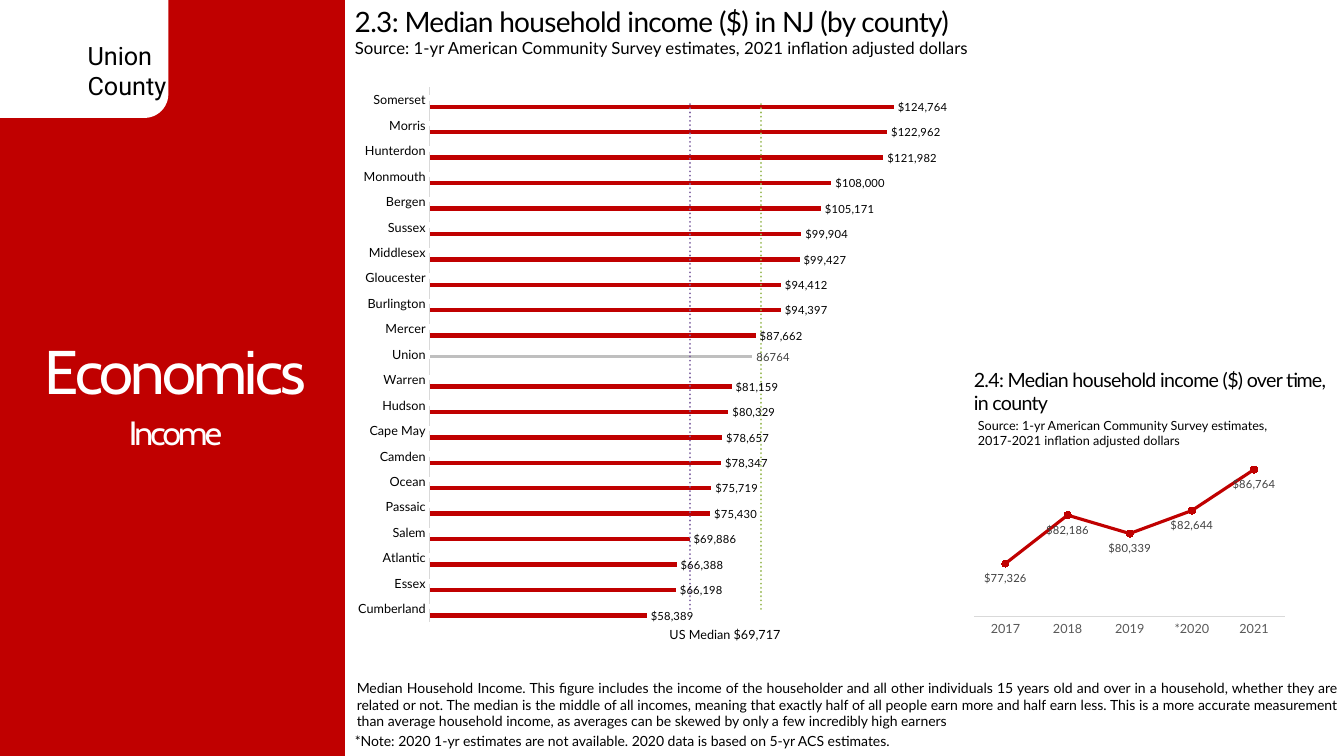
from lxml import etree
from pptx import Presentation
from pptx.chart.data import CategoryChartData
from pptx.dml.color import RGBColor
from pptx.enum.chart import XL_CHART_TYPE as Kind, XL_LABEL_POSITION as Spot
from pptx.enum.chart import XL_MARKER_STYLE as Marker, XL_TICK_MARK as Tick
from pptx.enum.shapes import MSO_SHAPE as Preset
from pptx.enum.text import MSO_ANCHOR as Anchor, MSO_AUTO_SIZE as Fit, PP_ALIGN as Align
from pptx.oxml import parse_xml
from pptx.oxml.ns import nsdecls, qn
from pptx.util import Inches, Pt

RED = RGBColor(0xC0, 0x00, 0x00)
WHITE = RGBColor(0xFF, 0xFF, 0xFF)
BLACK = RGBColor(0x00, 0x00, 0x00)
SILVER = RGBColor(0xBF, 0xBF, 0xBF)
RULE = RGBColor(0xD9, 0xD9, 0xD9)
CHARCOAL = RGBColor(0x40, 0x40, 0x40)
GRAY = RGBColor(0x59, 0x59, 0x59)
GREEN = RGBColor(0x9B, 0xBB, 0x59)
PURPLE = RGBColor(0x80, 0x64, 0xA2)

DOLLARS = '"$"#,##0'
HOME = "Union"
STATE_LINE, US_LINE = 89000, 70000
INCOMES = {
    "Cumberland": 58389, "Essex": 66198, "Atlantic": 66388, "Salem": 69886,
    "Passaic": 75430, "Ocean": 75719, "Camden": 78347, "Cape May": 78657,
    "Hudson": 80329, "Warren": 81159, "Union": 86764, "Mercer": 87662,
    "Burlington": 94397, "Gloucester": 94412, "Middlesex": 99427,
    "Sussex": 99904, "Bergen": 105171, "Monmouth": 108000,
    "Hunterdon": 121982, "Morris": 122962, "Somerset": 124764,
}
HISTORY = {"2017": 77326, "2018": 82186, "2019": 80339, "*2020": 82644, "2021": 86764}

SECTION = {"lines": ["Economics"], "at": (0.03, 3.22, 3.42, 1), "size": 44, "font": "Cabin",
           "color": WHITE, "spacing": -2, "align": Align.CENTER,
           "anchor": Anchor.MIDDLE, "leading": 0.9}
TOPIC = {**SECTION, "lines": ["Income"], "at": (0.03, 3.81, 3.42, 1), "size": 24}
TEXTS = [
    {"lines": ["Union", "County"], "at": (0.77, 0.35, 1, 0.71), "size": 18, "font": "Roboto"},
    {"lines": ["2.3: Median household income ($) in NJ (by county)"],
     "at": (3.42, 0, 9.86, 0.44), "size": 20, "spacing": -0.5},
    {"lines": ["Source: 1-yr American Community Survey estimates, 2021 inflation adjusted dollars"],
     "at": (3.42, 0.33, 9.19, 0.3), "size": 12},
    {"lines": ["Median Household Income. This figure includes the income of the householder and all "
               "other individuals 15 years old and over in a household, whether they are related or "
               "not. The median is the middle of all incomes, meaning that exactly half of all people "
               "earn more and half earn less. This is a more accurate measurement than average "
               "household income, as averages can be skewed by only a few incredibly high earners"],
     "at": (3.44, 6.69, 9.92, 0.6), "size": 10, "align": Align.JUSTIFY},
    {"lines": ["2.4: Median household income ($) over time, in county"],
     "at": (9.56, 3.6, 3.71, 0.57), "size": 14, "spacing": -0.5},
    {"lines": ["Source: 1-yr American Community Survey estimates, 2017-2021 inflation adjusted dollars"],
     "at": (9.6, 4.1, 3.38, 0.4), "size": 9},
    {"lines": ["*Note: 2020 1-yr estimates are not available. 2020 data is based on 5-yr ACS estimates."],
     "at": (3.42, 7.22, 7.05, 0.27), "size": 10},
    {"lines": ["US Median $69,717"], "at": (6.44, 6.17, 1.5, 0.25), "size": 9,
     "align": Align.CENTER},
]


def apply(target, values):
    """Set every attribute named in values on target."""
    for name, value in values.items():
        setattr(target, name, value)


def style_font(font, size, color, name="Lato"):
    """Give a font its size, face and colour."""
    apply(font, {"size": Pt(size), "name": name, "bold": False})
    font.color.rgb = color


def write(box, lines, at, size, font="Lato", color=BLACK, spacing=0,
          align=Align.LEFT, anchor=Anchor.TOP, leading=1.0):
    """Place a box and fill it with formatted lines."""
    apply(box, dict(zip(("left", "top", "width", "height"), map(Inches, at))))
    frame = box.text_frame
    apply(frame, {"word_wrap": True, "auto_size": Fit.NONE, "vertical_anchor": anchor})
    for index, line in enumerate(lines):
        para = frame.add_paragraph() if index else frame.paragraphs[0]
        apply(para, {"alignment": align, "line_spacing": leading, "space_before": Pt(0)})
        span = para.add_run()
        span.text = line
        style_font(span.font, size, color, font)
        if spacing:
            span.font._element.set("spc", str(int(spacing * 100)))


def add_block(page, preset, at, color):
    """Add a plain filled shape."""
    block = page.shapes.add_shape(preset, *map(Inches, at))
    block.shadow.inherit = False
    block.fill.solid()
    block.fill.fore_color.rgb = color
    block.line.fill.background()


def add_graph(page, kind, at, names, series, low, high, axis_color):
    """Add a chart with a hidden value axis and a thin category axis."""
    data = CategoryChartData()
    data.categories = names
    for label, values in series:
        data.add_series(label, values)
    chart = page.shapes.add_chart(kind, *map(Inches, at), data).chart
    apply(chart, {"has_title": False, "has_legend": False})
    style_font(chart.font, 10, BLACK, "Calibri")
    apply(chart.value_axis, {"visible": False, "has_major_gridlines": False,
                             "minimum_scale": low, "maximum_scale": high})
    axis = chart.category_axis
    apply(axis, {"major_tick_mark": Tick.NONE, "minor_tick_mark": Tick.NONE})
    style_font(axis.tick_labels.font, 9, axis_color)
    axis.format.line.color.rgb = RULE
    axis.format.line.width = Pt(0.75)
    apply(chart.plots[0], {"vary_by_categories": False})
    return chart


def label_values(series, color, position, number_format):
    """Show the values of a series."""
    labels = series.data_labels
    apply(labels, {"show_value": True, "position": position, "number_format": number_format,
                   "number_format_is_linked": False})
    style_font(labels.font, 8, color)


def add_trend(series, color):
    """Add a dotted linear trend line to a series."""
    trend = parse_xml(
        f'<c:trendline {nsdecls("c", "a")}><c:spPr><a:ln w="{Pt(1.5)}" cap="rnd"><a:solidFill>'
        f'<a:srgbClr val="{color}"/></a:solidFill><a:prstDash val="sysDot"/></a:ln></c:spPr>'
        '<c:trendlineType val="linear"/><c:dispRSqr val="0"/><c:dispEq val="0"/></c:trendline>')
    series._element.find(qn("c:cat")).addprevious(trend)


def set_plot_area(chart, bounds):
    """Fix the inner plot area as fractions of the chart."""
    area = chart._chartSpace.find(".//" + qn("c:plotArea"))
    for old in area.findall(qn("c:layout")):
        area.remove(old)
    layout = etree.Element(qn("c:layout"))
    manual = etree.SubElement(layout, qn("c:manualLayout"))
    settings = [("layoutTarget", "inner"), ("xMode", "edge"), ("yMode", "edge"),
                *zip("xywh", bounds)]
    for tag, value in settings:
        etree.SubElement(manual, qn("c:" + tag)).set("val", str(value))
    area.insert(0, layout)


def add_county_chart(page):
    """Compare the counties, with Union set apart and two reference lines."""
    count = len(INCOMES)
    series = [
        ("Series 1", [None if name == HOME else pay for name, pay in INCOMES.items()]),
        ("County", [pay if name == HOME else None for name, pay in INCOMES.items()]),
        ("Series 3", [STATE_LINE] * count),
        ("Series 4", [US_LINE] * count),
    ]
    chart = add_graph(page, Kind.BAR_CLUSTERED, (3.46, 0.67, 6.16, 5.83),
                      list(INCOMES), series, 0, 140000, BLACK)
    set_plot_area(chart, (0.13, 0.034, 0.839, 0.909))
    apply(chart.plots[0], {"gap_width": 182, "overlap": 0})
    bars = list(chart.plots[0].series)
    for bar, color in zip(bars, (RED, SILVER, WHITE, WHITE)):
        bar.format.fill.solid()
        bar.format.fill.fore_color.rgb = color
    for bar in bars[1:3]:
        bar.format.line.color.rgb = WHITE
        bar.format.line.width = Pt(0.75)
    label_values(bars[0], BLACK, Spot.OUTSIDE_END, DOLLARS)
    label_values(bars[1], CHARCOAL, Spot.OUTSIDE_END, "General")
    add_trend(bars[2], GREEN)
    add_trend(bars[3], PURPLE)


def add_history_chart(page):
    """Draw the county's income over time."""
    chart = add_graph(page, Kind.LINE_MARKERS, (9.6, 4.5, 3.21, 1.85), list(HISTORY),
                      [("Series 1", list(HISTORY.values()))], 72000, 88000, GRAY)
    line = chart.plots[0].series[0]
    line.smooth = False
    line.format.line.color.rgb = RED
    line.format.line.width = Pt(2.25)
    apply(line.marker, {"style": Marker.CIRCLE, "size": 5})
    line.marker.format.fill.solid()
    line.marker.format.fill.fore_color.rgb = RED
    line.marker.format.line.color.rgb = RED
    label_values(line, CHARCOAL, Spot.BELOW, DOLLARS)


def main():
    """Build the slide and save it."""
    deck = Presentation()
    apply(deck, {"slide_width": Inches(13.33), "slide_height": Inches(7.5)})
    page = deck.slides.add_slide(deck.slide_layouts[0])
    add_block(page, Preset.RECTANGLE, (0, 0, 3.42, 7.5), RED)
    add_block(page, Preset.ROUNDED_RECTANGLE, (-0.33, -0.25, 2, 1.42), WHITE)
    add_history_chart(page)
    add_county_chart(page)
    for box, text in zip(list(page.placeholders), (SECTION, TOPIC)):
        write(box, **text)
        page.shapes.element.append(box.element)
    for text in TEXTS:
        write(page.shapes.add_textbox(0, 0, 0, 0), **text)
    deck.save("out.pptx")


if __name__ == "__main__":
    main()
